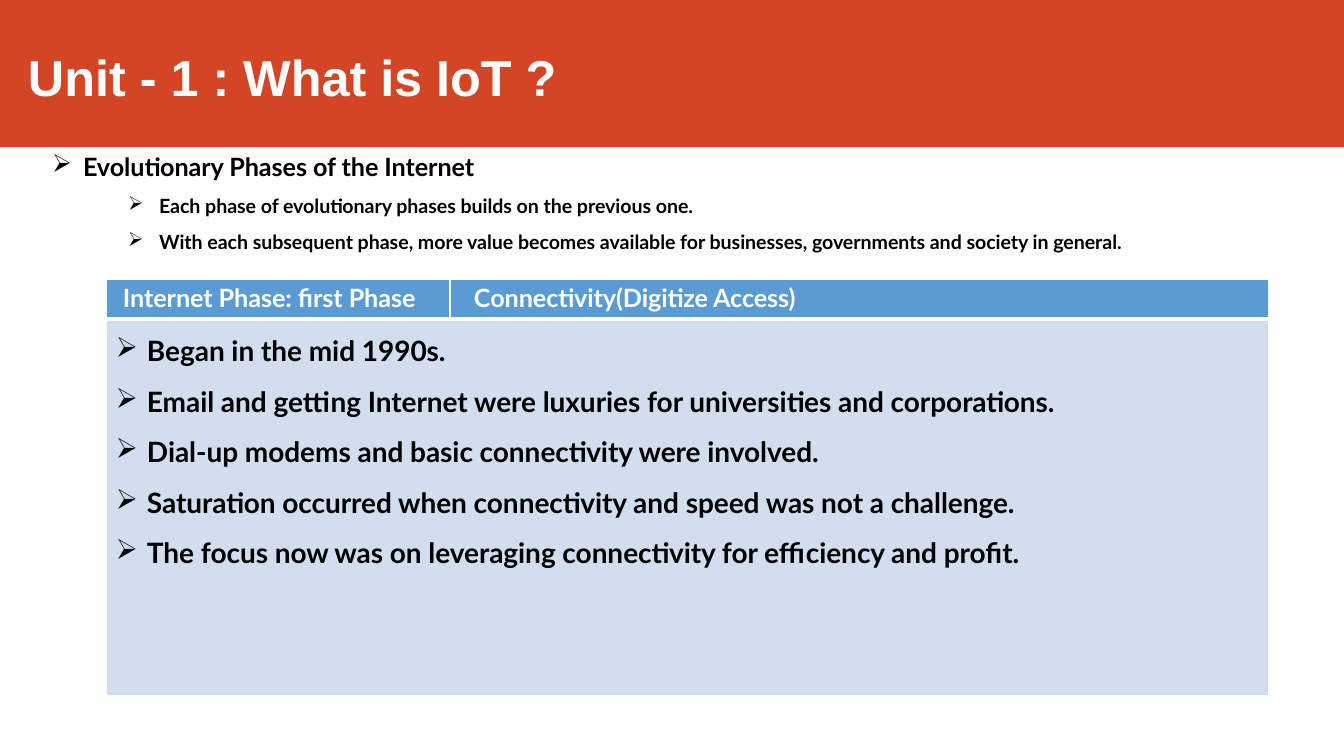
"""Builds the slide on the first evolutionary phase of the Internet."""
from dataclasses import dataclass

from lxml.etree import SubElement
from pptx import Presentation
from pptx.dml.color import RGBColor
from pptx.enum.shapes import MSO_SHAPE
from pptx.enum.text import MSO_ANCHOR
from pptx.oxml.ns import qn
from pptx.util import Pt

SLIDE_WIDTH, SLIDE_HEIGHT = 1344, 756
EMU_PER_PX = 12192000 / SLIDE_WIDTH


@dataclass(frozen=True)
class Theme:
    """Colours, fonts and type sizes of the slide."""
    banner: str = "D24625"
    header: str = "5B9BD4"
    body: str = "D2DEEE"
    light: str = "FFFFFF"
    dark: str = "000000"
    title_font: str = "Arial"
    text_font: str = "Lato"
    title_size: int = 36
    heading_size: int = 18
    point_size: int = 14
    phase_size: int = 20
    tracking: str = "-5"


THEME = Theme()

OUTLINE = (
    ("Evolutionary Phases of the Internet", THEME.heading_size, 33, 0, 13),
    ("Each phase of evolutionary phases builds on the previous one.",
     THEME.point_size, 109, 1, 9.4),
    ("With each subsequent phase, more value becomes available for businesses, "
     "governments and society in general.", THEME.point_size, 109, 1, 8.4),
)
HEADERS = (("Internet Phase: first Phase", 17), ("Connectivity(Digitize Access)", 24))
PHASE_POINTS = (
    "Began in the mid 1990s.",
    "Email and getting Internet were luxuries for universities and corporations.",
    "Dial-up modems and basic connectivity were involved.",
    "Saturation occurred when connectivity and speed was not a challenge.",
    "The focus now was on leveraging connectivity for efficiency and profit.",
)


def px(length):
    """Turn pixels into EMU."""
    return round(length * EMU_PER_PX)


def apply_format(target, values):
    """Set each named attribute on the target."""
    for name, value in values.items():
        setattr(target, name, value)


def paint(fill, color):
    """Make a fill solid."""
    fill.solid()
    fill.fore_color.rgb = RGBColor.from_string(color)


def write_paragraph(frame, text, size, color, font=THEME.text_font, margin=0,
                    before=0, level=0, bullet=False, tracking=THEME.tracking):
    """Write one bold paragraph, using the first one while it is empty."""
    first = frame.paragraphs[0]
    paragraph = frame.add_paragraph() if first.runs else first
    apply_format(paragraph, {"level": level, "space_before": Pt(before)})
    properties = paragraph._p.get_or_add_pPr()
    properties.set("marL", str(px(margin)))
    properties.set("indent", str(px(-31 if bullet else 0)))
    if bullet:
        SubElement(properties, qn("a:buChar")).set("char", "➢")
    run = paragraph.add_run()
    run.text = text
    apply_format(run.font, {"name": font, "size": Pt(size), "bold": True})
    run.font.color.rgb = RGBColor.from_string(color)
    run._r.get_or_add_rPr().set("spc", tracking)


def add_banner(slide, height):
    """Draw the band across the top."""
    banner = slide.shapes.add_shape(MSO_SHAPE.RECTANGLE, 0, 0, px(SLIDE_WIDTH), px(height))
    banner.shadow.inherit = False
    paint(banner.fill, THEME.banner)
    banner.line.fill.background()


def add_text_frame(slide, left, top, width, height, inset):
    """Add a wrapping text box with only a top inset and return its frame."""
    frame = slide.shapes.add_textbox(px(left), px(top), px(width), px(height)).text_frame
    apply_format(frame, {"word_wrap": True, "vertical_anchor": MSO_ANCHOR.TOP,
                         "margin_left": 0, "margin_right": 0,
                         "margin_top": px(inset), "margin_bottom": 0})
    return frame


def style_cell(cell, color, inset, widths):
    """Set the insets, borders and fill of a cell."""
    apply_format(cell, {"margin_left": 0, "margin_right": 0,
                        "margin_top": px(inset), "margin_bottom": 0,
                        "vertical_anchor": MSO_ANCHOR.TOP})
    properties = cell._tc.get_or_add_tcPr()
    for side, width in widths.items():
        border = SubElement(properties, qn(f"a:ln{side}"), w=str(Pt(width)))
        solid = SubElement(border, qn("a:solidFill"))
        SubElement(solid, qn("a:srgbClr")).set("val", THEME.light)
    paint(cell.fill, color)


def add_phase_table(slide, left, top, columns, rows):
    """Add the table with a header row and one merged body cell."""
    frame = slide.shapes.add_table(len(rows), len(columns), px(left), px(top),
                                   px(sum(columns)), px(sum(rows)))
    table = frame.table
    table.horz_banding = False
    for column, width in zip(table.columns, columns):
        column.width = px(width)
    for row, height in zip(table.rows, rows):
        row.height = px(height)
    for index, (text, margin) in enumerate(HEADERS):
        header, body = table.cell(0, index), table.cell(1, index)
        style_cell(header, THEME.header, 4, {"L": 1, "R": 1, "T": 1, "B": 3})
        style_cell(body, THEME.body, 15, {"L": 1, "R": 1, "T": 3, "B": 1})
        write_paragraph(header.text_frame, text, THEME.heading_size, THEME.light,
                        margin=margin, before=3)
    body = table.cell(1, 0)
    body.merge(table.cell(1, len(columns) - 1))
    for index, text in enumerate(PHASE_POINTS):
        write_paragraph(body.text_frame, text, THEME.phase_size, THEME.dark,
                        margin=41, before=12 if index else 10.7, bullet=True)


def main():
    """Build and save the slide."""
    presentation = Presentation()
    apply_format(presentation, {"slide_width": px(SLIDE_WIDTH),
                                "slide_height": px(SLIDE_HEIGHT)})
    slide = presentation.slides.add_slide(presentation.slide_layouts[6])
    add_banner(slide, 147)
    title = add_text_frame(slide, 27, 45, 611, 64, 1)
    write_paragraph(title, "Unit - 1 : What is IoT ?", THEME.title_size, THEME.light,
                    font=THEME.title_font, margin=1, before=1, tracking="0")
    outline = add_text_frame(slide, 50, 133, 1141, 122, 18)
    for text, size, margin, level, before in OUTLINE:
        write_paragraph(outline, text, size, THEME.dark, margin=margin,
                        before=before, level=level, bullet=True)
    add_phase_table(slide, 106, 279, (344, 819), (40, 377))
    presentation.save("out.pptx")


if __name__ == "__main__":
    main()
